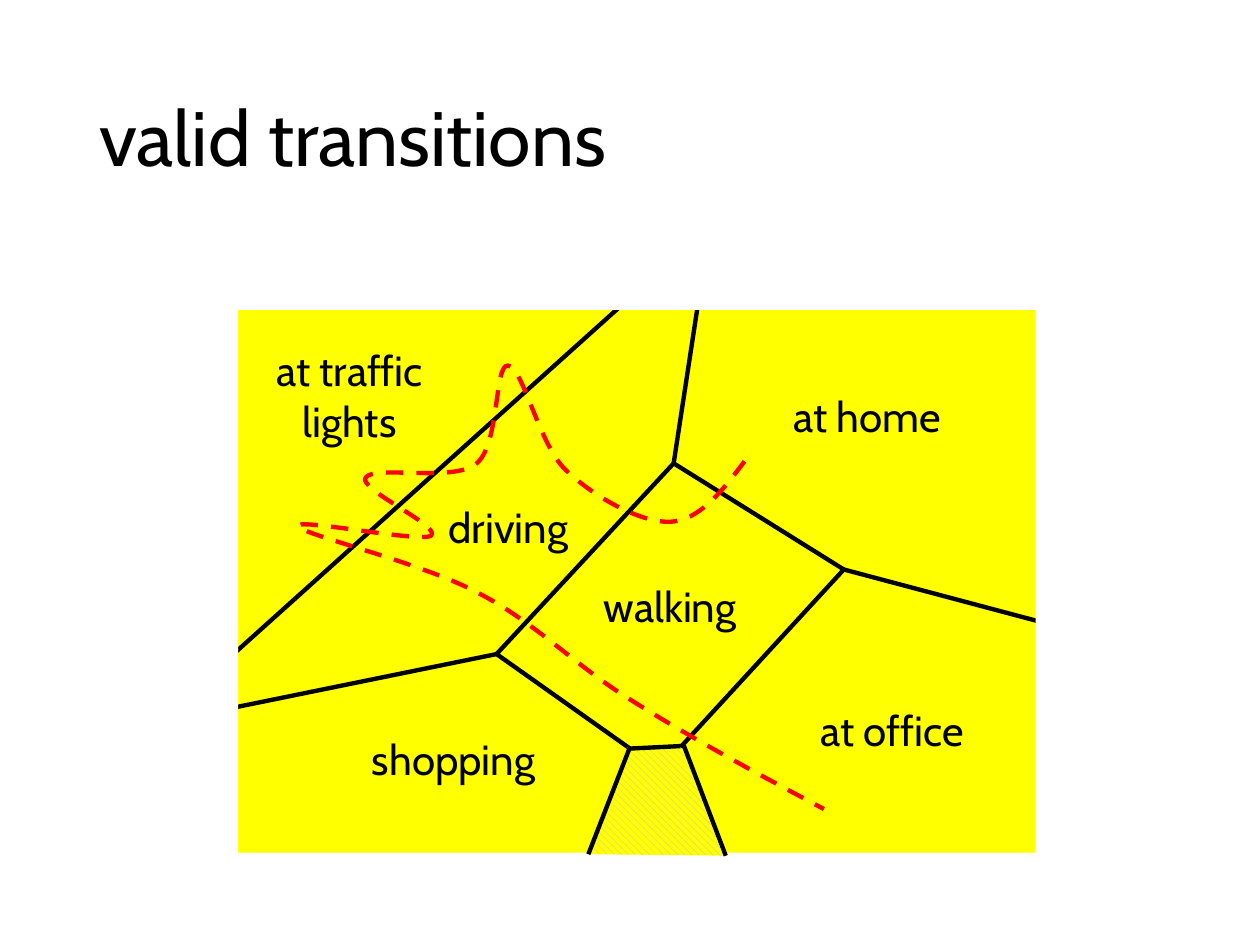
from lxml import etree
from pptx import Presentation, util as u
from pptx.dml import color as c
from pptx.enum import dml, shapes, text
from pptx.oxml import ns

YELLOW, BLACK, RED, WHITE, GREY = "FFFF00", "000000", "FF0000", "FFFFFF", "BFBFBF"


def rgb(value):
    return c.RGBColor.from_string(value)


def write(tf, content, size=24, font="Cabin", color=BLACK,
          align=text.PP_ALIGN.CENTER, spacing=None):
    p = tf.paragraphs[0]
    p.text = content
    p.alignment = align
    p.line_spacing = spacing
    for r in p.runs:
        r.font.size = u.Pt(size)
        r.font.name = font
        r.font.color.rgb = rgb(color)


class Deck:
    line_width = 2.5

    def __init__(self, prs):
        self.s = prs.slides.add_slide(prs.slide_layouts[5])

    def title(self, content, *box):
        sp = self.s.shapes.title
        sp.left, sp.top, sp.width, sp.height = map(u.Cm, box)
        sp.text_frame.vertical_anchor = text.MSO_ANCHOR.MIDDLE
        write(sp.text_frame, content, size=44, align=text.PP_ALIGN.LEFT, spacing=0.9)

    def style(self, sp, fill=None, line=None, width=line_width):
        sp.shadow.inherit = False
        if fill:
            sp.fill.solid()
            sp.fill.fore_color.rgb = rgb(fill)
        else:
            sp.fill.background()
        if line:
            sp.line.color.rgb = rgb(line)
            sp.line.width = u.Pt(width)
        else:
            sp.line.fill.background()
        return sp

    def shape(self, kind, *box, **look):
        return self.style(self.s.shapes.add_shape(kind, *map(u.Cm, box)), **look)

    def rect(self, *box, **look):
        return self.shape(shapes.MSO_SHAPE.RECTANGLE, *box, **look)

    def label(self, content, *box):
        tf = self.s.shapes.add_textbox(*map(u.Cm, box)).text_frame
        tf.word_wrap = False
        tf.auto_size = text.MSO_AUTO_SIZE.SHAPE_TO_FIT_TEXT
        write(tf, content)

    def line(self, start, end):
        ends = [(0, 0) if isinstance(e[0], shapes_type) else e for e in (start, end)]
        cn = self.s.shapes.add_connector(
            shapes.MSO_CONNECTOR.STRAIGHT, *(u.Cm(v) for e in ends for v in e))
        for e, connect in ((start, cn.begin_connect), (end, cn.end_connect)):
            if isinstance(e[0], shapes_type):
                connect(*e)
        cn.line.color.rgb = rgb(BLACK)
        cn.line.width = u.Pt(self.line_width)
        etree.SubElement(cn._element.spPr, ns.qn("a:effectLst"))

    def freeform(self, points, close=False, **look):
        pts = [(u.Cm(x), u.Cm(y)) for x, y in points]
        fb = self.s.shapes.build_freeform(*pts[0])
        fb.add_line_segments(pts[1:], close=close)
        return self.style(fb.convert_to_shape(), **look)

    def curve(self, points, **look):
        sp = self.freeform(points, **look)
        segments = list(sp._element.iter(ns.qn("a:lnTo")))
        for i in range(0, len(segments), 3):
            bezier = etree.Element(ns.qn("a:cubicBezTo"))
            segments[i].addprevious(bezier)
            for segment in segments[i:i + 3]:
                bezier.append(segment[0])
                segment.getparent().remove(segment)
        return sp


def main():
    global shapes_type
    prs = Presentation()
    prs.slide_width, prs.slide_height = u.Cm(25.4), u.Cm(19.05)
    d = Deck(prs)
    d.title("valid transitions", 1.75, 1.02, 21.9, 3.68)

    d.rect(4.37, 6.12, 16.81, 11.07, fill=YELLOW)
    north, east, west, south = [
        d.rect(x, y, 2.06, 1.47, fill=YELLOW, line=YELLOW, width=1.5)
        for x, y in ((12.55, 7.87), (15.98, 10.01), (7.95, 12.45), (12.24, 15.44))]
    shapes_type = type(north)

    traffic = d.shape(shapes.MSO_SHAPE.RIGHT_TRIANGLE, 4.37, 6.12, 8.2, 7.37,
                      fill=YELLOW, line=BLACK)
    traffic._element.spPr.xfrm.set("flipV", "1")

    for content, *box in (
            ("at traffic\vlights", 5.26, 6.83, 3.58, 2.31),
            ("driving", 8.76, 9.98, 2.97, 1.27),
            ("walking", 11.86, 11.58, 3.3, 1.27),
            ("at home", 15.72, 7.75, 3.53, 1.27),
            ("at office", 16.23, 14.07, 3.51, 1.27),
            ("shopping", 7.19, 14.66, 3.91, 1.27)):
        d.label(content, *box)

    top, right, left = (north, 2), (east, 2), (west, 3)
    for start, end in (
            (top, (14.15, 5.61)),
            (left, (12.7, 15.09)),
            (right, top),
            (left, top),
            (right, (13.72, 15.06)),
            (right, (21.03, 12.55)),
            ((4.39, 14.33), left)):
        d.line(start, end)

    route = d.curve([
        (15.01, 9.3),
        (14.55, 9.91), (14.1, 10.49), (13.51, 10.52),
        (12.9, 10.54), (11.96, 10.01), (11.4, 9.47),
        (10.87, 8.97), (10.54, 7.39), (10.24, 7.37),
        (9.96, 7.34), (10.08, 8.97), (9.6, 9.35),
        (9.14, 9.73), (7.54, 9.37), (7.37, 9.63),
        (7.21, 9.86), (8.92, 10.62), (8.69, 10.8),
        (8.46, 10.95), (5.84, 10.41), (6.02, 10.62),
        (6.17, 10.8), (8.53, 11.35), (9.65, 11.96),
        (10.8, 12.55), (11.61, 13.44), (12.78, 14.15),
        (13.94, 14.88), (15.27, 15.6), (16.61, 16.31)], line=RED)
    route.line.dash_style = dml.MSO_LINE.DASH

    for box in ((3.58, 5.54, 18.24, 0.71), (3.91, 17.2, 17.81, 0.71),
                (20.88, 5.54, 0.86, 12.4), (3.91, 5.54, 0.89, 12.4)):
        d.rect(*box, fill=WHITE)

    d.line((14.63, 17.25), (13.77, 14.99))
    gap = d.freeform([(12.65, 15.06), (13.72, 15.06), (14.58, 17.25), (11.84, 17.22)],
                     close=True)
    gap.fill.patterned()
    gap.fill.pattern = dml.MSO_PATTERN.WIDE_DOWNWARD_DIAGONAL
    gap.fill.fore_color.rgb = rgb(GREY)
    gap.fill.back_color.rgb = rgb(YELLOW)
    d.line((11.86, 17.22), (12.7, 15.06))
    d.line((12.7, 15.09), (13.72, 15.04))

    prs.save("out.pptx")


if __name__ == "__main__":
    main()
